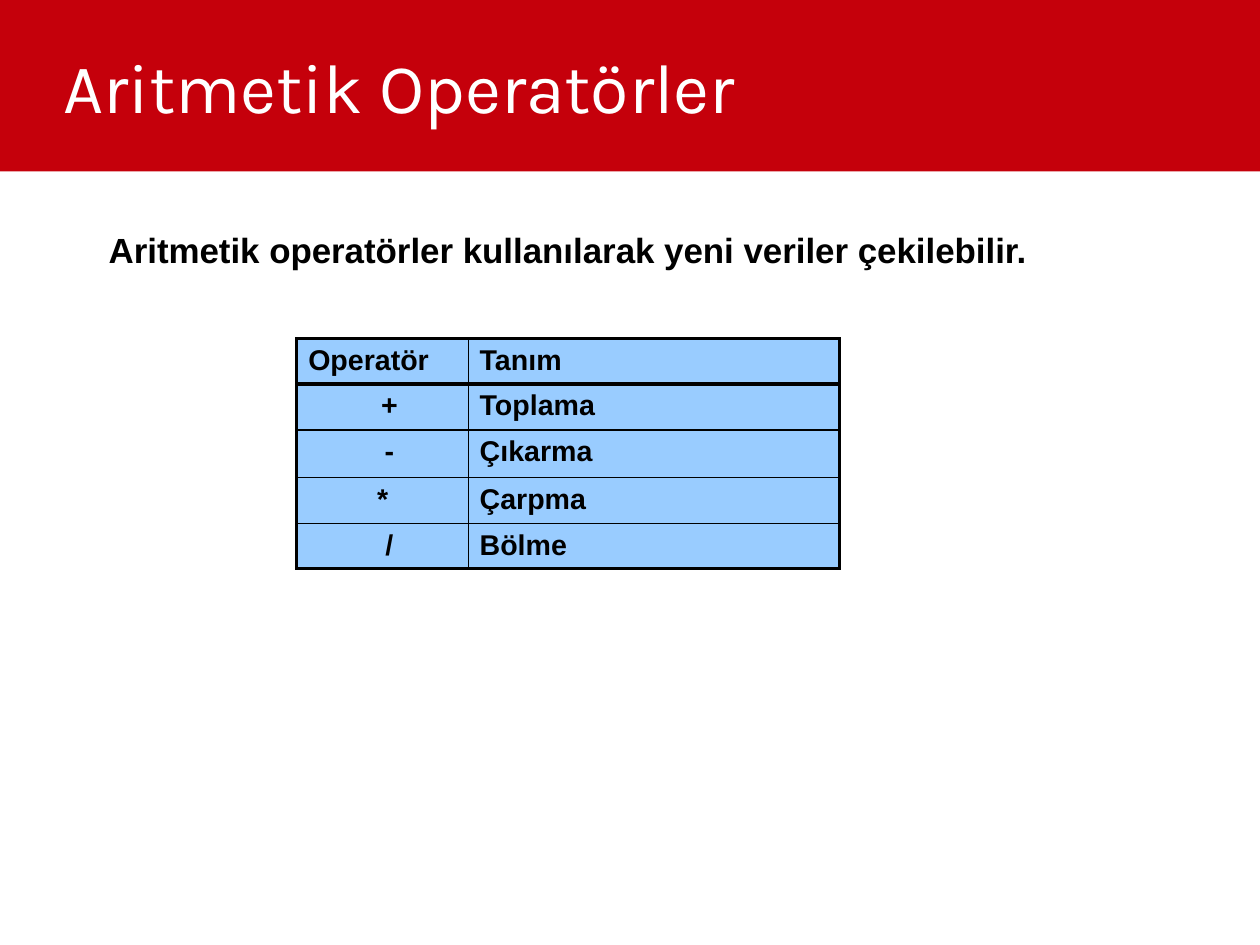
from lxml.etree import SubElement
from pptx import Presentation
from pptx.dml.color import RGBColor
from pptx.enum.shapes import MSO_SHAPE
from pptx.enum.text import MSO_ANCHOR, MSO_AUTO_SIZE, PP_ALIGN
from pptx.oxml.ns import qn
from pptx.util import Pt

TITLE = "Aritmetik Operatörler"
LEAD = "Aritmetik operatörler kullanılarak yeni veriler çekilebilir."
ROWS = [
    ("Operatör", "Tanım"),
    ("+", "Toplama"),
    ("-", "Çıkarma"),
    ("*", "Çarpma"),
    ("/", "Bölme"),
]
COLS = [108, 233.7]
TALL = [28.5, 29, 30, 29, 28.5]
WIDE, HIGH = 793.75, 595.25
RED, BLUE, BLACK, WHITE = "C5000B", "99CCFF", "000000", "FFFFFF"
THICK, THIN = 2.25, 1


def paint(fill, color):
    fill.solid()
    fill.fore_color.rgb = RGBColor.from_string(color)


def write(frame, text, size, font, color, bold=False, align=PP_ALIGN.LEFT):
    para = frame.paragraphs[0]
    para.alignment = align
    run = para.add_run()
    run.text = text
    run.font.size = Pt(size)
    run.font.name = font
    run.font.bold = bold
    paint(run.font.fill, color)
    return para


def place(shape, left, top, width, height, inset):
    shape.left, shape.top = Pt(left), Pt(top)
    shape.width, shape.height = Pt(width), Pt(height)
    frame = shape.text_frame
    frame.auto_size = MSO_AUTO_SIZE.NONE
    frame.word_wrap = True
    frame.margin_left = frame.margin_right = Pt(inset)
    frame.margin_top = frame.margin_bottom = Pt(inset)
    return frame


def border(cell, side, width):
    props = cell._tc.get_or_add_tcPr()
    line = SubElement(props, qn("a:ln" + side), w=str(Pt(width)))
    fill = SubElement(line, qn("a:solidFill"))
    SubElement(fill, qn("a:srgbClr"), val=BLACK)


def add_grid(slide):
    frame = slide.shapes.add_table(
        len(ROWS), len(COLS), Pt(187), Pt(213.4), Pt(sum(COLS)), Pt(sum(TALL))
    )
    table = frame.table
    table.first_row = table.horz_banding = False
    for col, width in zip(table.columns, COLS):
        col.width = Pt(width)
    last = len(ROWS) - 1
    for r, row in enumerate(ROWS):
        table.rows[r].height = Pt(TALL[r])
        for c, text in enumerate(row):
            cell = table.cell(r, c)
            edges = {"L": c == 0, "R": c == 1, "T": r < 2, "B": r in (0, last)}
            for side, heavy in edges.items():
                border(cell, side, THICK if heavy else THIN)
            paint(cell.fill, BLUE)
            sign = r > 0 and c == 0
            align = PP_ALIGN.CENTER if sign else PP_ALIGN.LEFT
            para = write(cell.text_frame, text, 18, "Arial", BLACK, True, align)
            if sign and text != "*":
                para.level = 1
                props = para._p.get_or_add_pPr()
                props.set("marL", str(Pt(8.64)))
                props.set("indent", "0")


def main():
    deck = Presentation()
    deck.slide_width, deck.slide_height = Pt(WIDE), Pt(HIGH)
    slide = deck.slides.add_slide(deck.slide_layouts[5])
    paint(slide.background.fill, WHITE)

    band = slide.shapes.add_shape(MSO_SHAPE.RECTANGLE, 0, 0, Pt(WIDE), Pt(108))
    band.shadow.inherit = False
    paint(band.fill, RED)
    band.line.fill.background()

    title = slide.shapes.title
    band._element.addnext(title._element)
    frame = place(title, 39.7, 4.3, 754, 99.4, 0)
    frame.vertical_anchor = MSO_ANCHOR.MIDDLE
    write(frame, TITLE, 44, "Karla", WHITE)

    lead = slide.shapes.add_textbox(0, 0, 0, 0)
    frame = place(lead, 67.8, 143.3, 623.5, 28.8, 0.72)
    write(frame, LEAD, 22, "Arial", BLACK, True)

    add_grid(slide)
    deck.save("out.pptx")


if __name__ == "__main__":
    main()
